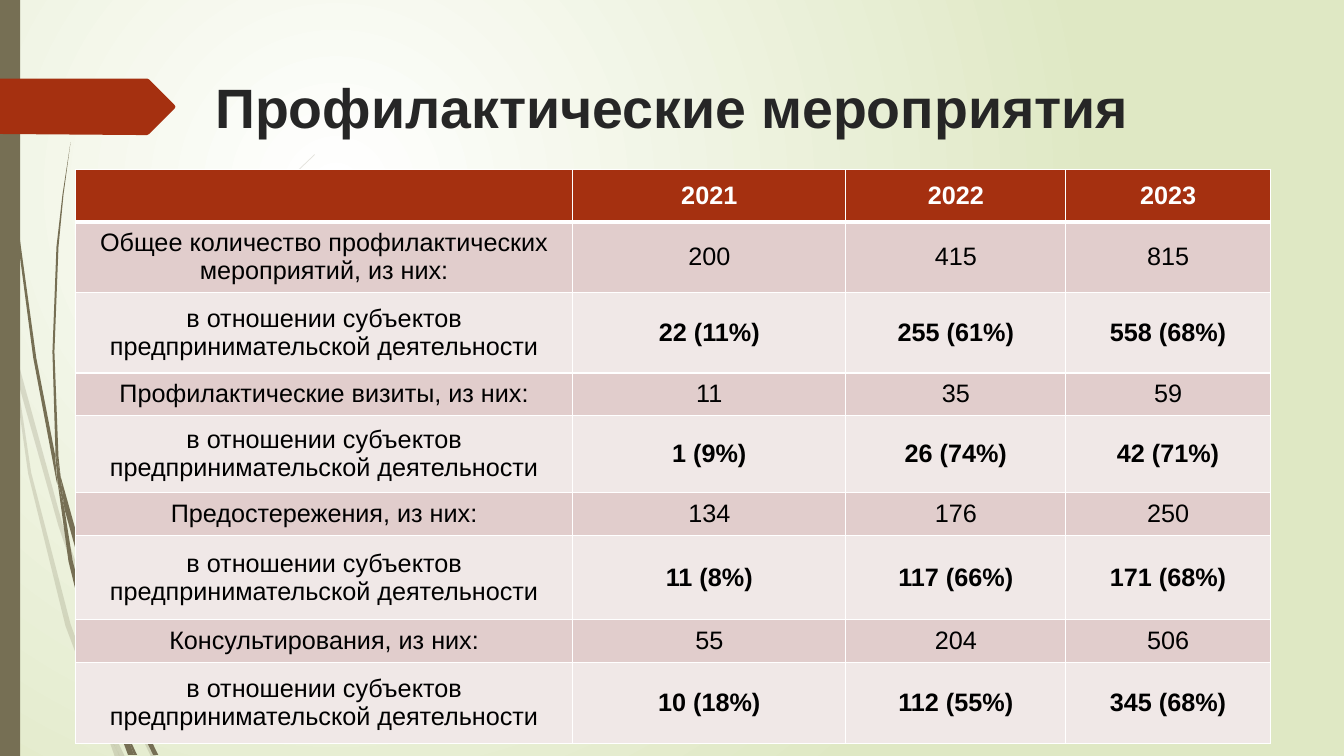
from itertools import product

from pptx import Presentation
from pptx.dml.color import RGBColor as Rgb
from pptx.enum.shapes import MSO_SHAPE as Shape
from pptx.enum.text import MSO_ANCHOR as Anchor, PP_ALIGN as Align
from pptx.oxml.ns import qn
from pptx.oxml.xmlchemy import OxmlElement as Element
from pptx.util import Emu, Pt

COLUMNS, ROWS = 1333, 750
CELL = 9144

COLORS = {
    "glow": "FFFFFF", "meadow": "DFE8C4", "grass": "766F54", "accent": "A53010",
    "title": "262626", "white": "FFFFFF", "black": "000000",
    "total": "E1CDCC", "share": "F0E8E7",
}

# Outlines of the grass blades: column and row of each corner
PALE_BLADES = [
    [(11, 350), (9, 322), (0, 282), (0, 299), (10, 344)],
    [(58, 522), (84, 599), (85, 586), (62, 520), (14, 345), (17, 376)],
    [(92, 607), (88, 596), (88, 610), (123, 694), (150, 751), (155, 751), (127, 692)],
    [(119, 751), (124, 751), (105, 711)],
    [(93, 683), (70, 619), (31, 469), (17, 376), (11, 350), (28, 470), (65, 621),
     (92, 693), (101, 714), (99, 707)],
    [(84, 599), (87, 646), (93, 683), (96, 692), (105, 711), (103, 706), (91, 646),
     (88, 610), (88, 608)],
    [(88, 584), (110, 462), (160, 349), (229, 245), (268, 198), (290, 175), (312, 154),
     (312, 153), (289, 175), (268, 197), (228, 244), (158, 348), (107, 461), (85, 584),
     (85, 586), (88, 596)],
    [(101, 714), (114, 751), (119, 751)],
    [(88, 608), (88, 610), (88, 596), (85, 586), (84, 599)],
    [(96, 692), (93, 683), (99, 707), (101, 714), (119, 751), (105, 711)],
]
DARK_BLADES = [
    [(7, 110), (17, 233), (33, 355), (56, 477), (57, 481), (55, 457), (55, 453),
     (36, 355), (19, 232), (8, 109), (5, 48), (4, 0), (3, 0), (4, 48)],
    [(88, 592), (106, 645), (106, 633), (106, 631), (93, 590), (60, 472), (64, 505)],
    [(113, 649), (110, 641), (111, 656), (132, 708), (152, 749), (157, 749), (136, 706)],
    [(110, 691), (98, 657), (72, 556), (64, 505), (57, 477), (68, 557), (93, 659),
     (111, 708), (117, 722), (116, 717)],
    [(60, 472), (58, 453), (54, 349), (58, 245), (63, 193), (70, 141), (62, 193),
     (56, 245), (52, 349), (55, 449)],
    [(133, 749), (136, 749), (122, 719)],
    [(57, 477), (64, 505), (60, 472), (55, 449), (55, 453)],
    [(111, 633), (125, 552), (158, 476), (205, 406), (231, 374), (245, 359), (261, 344),
     (260, 344), (245, 358), (231, 373), (204, 405), (156, 474), (122, 551), (106, 631),
     (110, 641)],
    [(117, 722), (127, 749), (131, 749)],
    [(106, 645), (110, 691), (116, 706), (122, 719), (121, 716), (111, 656), (109, 651)],
    [(106, 645), (109, 651), (111, 656), (110, 641), (106, 631), (106, 633)],
    [(116, 706), (110, 691), (116, 717), (117, 722), (130, 749), (133, 749), (122, 719)],
]
ARROW = [(173, 108), (148, 133), (146, 134), (136, 134), (0, 133), (0, 78), (146, 78),
         (148, 79), (173, 104), (174, 106)]

SUBJECTS = "в отношении субъектов предпринимательской деятельности"
MEASURES = [
    ["", "2021", "2022", "2023"],
    ["Общее количество профилактических мероприятий, из них:", "200", "415", "815"],
    [SUBJECTS, "22 (11%)", "255 (61%)", "558 (68%)"],
    ["Профилактические визиты, из них:", "11", "35", "59"],
    [SUBJECTS, "1 (9%)", "26 (74%)", "42 (71%)"],
    ["Предостережения, из них:", "134", "176", "250"],
    [SUBJECTS, "11 (8%)", "117 (66%)", "171 (68%)"],
    ["Консультирования, из них:", "55", "204", "506"],
    [SUBJECTS, "10 (18%)", "112 (55%)", "345 (68%)"],
]
TABLE_COLUMNS = [493, 271, 218, 203]
TABLE_ROWS = [52, 66, 80, 42, 77, 42, 84, 42, 81]


def cells(count):
    return Emu(count * CELL)


class SlideBuilder:
    """Draws on one page, with lengths in grid columns and rows."""

    font = "Arial"

    def __init__(self, page):
        self.page = page

    def color(self, name):
        return Rgb.from_string(COLORS[name])

    def background(self, inner, outer):
        fill = self.page.background.fill
        fill.gradient()
        for stop, name in zip(fill.gradient_stops, (inner, outer)):
            stop.color.rgb = self.color(name)
        gradient = self.page.element.find(".//" + qn("a:gradFill"))
        gradient.remove(gradient.find(qn("a:lin")))
        circle, center = Element("a:path"), Element("a:fillToRect")
        circle.set("path", "circle")
        for side, share in {"l": 50, "t": 50, "r": 100, "b": 100}.items():
            center.set(side, str(share * 1000))
        circle.append(center)
        gradient.append(circle)

    def paint(self, shape, name, opacity=100):
        shape.shadow.inherit = False
        shape.line.fill.background()
        shape.fill.solid()
        shape.fill.fore_color.rgb = self.color(name)
        if opacity < 100:
            alpha = Element("a:alpha")
            alpha.set("val", str(opacity * 1000))
            shape.element.find(".//" + qn("a:srgbClr")).append(alpha)

    def outline(self, corners, name, opacity=100):
        start, *rest = [(cells(x), cells(y)) for x, y in corners]
        builder = self.page.shapes.build_freeform(*start)
        builder.add_line_segments(rest, close=True)
        self.paint(builder.convert_to_shape(), name, opacity)

    def bar(self, *place, name):
        self.paint(self.page.shapes.add_shape(Shape.RECTANGLE, *map(cells, place)), name)

    def put_text(self, frame, words, name, **formats):
        para = frame.paragraphs[0]
        para.alignment = Align.CENTER
        span = para.add_run()
        span.text = words
        span.font.color.rgb = self.color(name)
        for key, value in {"name": self.font, **formats}.items():
            setattr(span.font, key, value)
        return para

    def title(self, words, *place):
        frame = self.page.shapes.add_textbox(*map(cells, place)).text_frame
        for key, value in {"word_wrap": True, "vertical_anchor": Anchor.MIDDLE}.items():
            setattr(frame, key, value)
        para = self.put_text(frame, words, "title", size=Pt(39.6), bold=True)
        para.line_spacing = 0.9

    def border(self, cell, bottom):
        properties = cell._tc.get_or_add_tcPr()
        for side, width in {"L": 1, "R": 1, "T": 1, "B": bottom}.items():
            line, fill, tone = map(Element, (f"a:ln{side}", "a:solidFill", "a:srgbClr"))
            line.set("w", str(Pt(width)))
            tone.set("val", COLORS["white"])
            fill.append(tone)
            line.append(fill)
            properties.append(line)

    def table(self, rows, left, top, widths, heights):
        place = map(cells, (left, top, sum(widths), sum(heights)))
        table = self.page.shapes.add_table(len(rows), len(widths), *place).table
        for column, width in zip(table.columns, widths):
            column.width = cells(width)
        for row, height in zip(table.rows, heights):
            row.height = cells(height)
        for r, c in product(range(len(rows)), range(len(widths))):
            cell = table.cell(r, c)
            header, share = r == 0, r % 2 == 0
            self.border(cell, 3 if header else 1)
            cell.fill.solid()
            cell.fill.fore_color.rgb = self.color(
                "accent" if header else "share" if share else "total")
            cell.vertical_anchor = Anchor.MIDDLE
            if rows[r][c]:
                self.put_text(cell.text_frame, rows[r][c], "white" if header else "black",
                              size=Pt(18), bold=header or (share and c > 0))


def main():
    deck = Presentation()
    deck.slide_width, deck.slide_height = cells(COLUMNS), cells(ROWS)
    slide = SlideBuilder(deck.slides.add_slide(deck.slide_layouts[6]))
    slide.background("glow", "meadow")
    for blades, opacity in ((PALE_BLADES, 20), (DARK_BLADES, 100)):
        for blade in blades:
            slide.outline(blade, "grass", opacity)
    slide.bar(0, 0, 20, ROWS, name="grass")
    slide.outline(ARROW, "accent")
    slide.title("Профилактические мероприятия", 179, 65, 975, 90)
    slide.table(MEASURES, 75, 168, TABLE_COLUMNS, TABLE_ROWS)
    deck.save("out.pptx")


if __name__ == "__main__":
    main()
